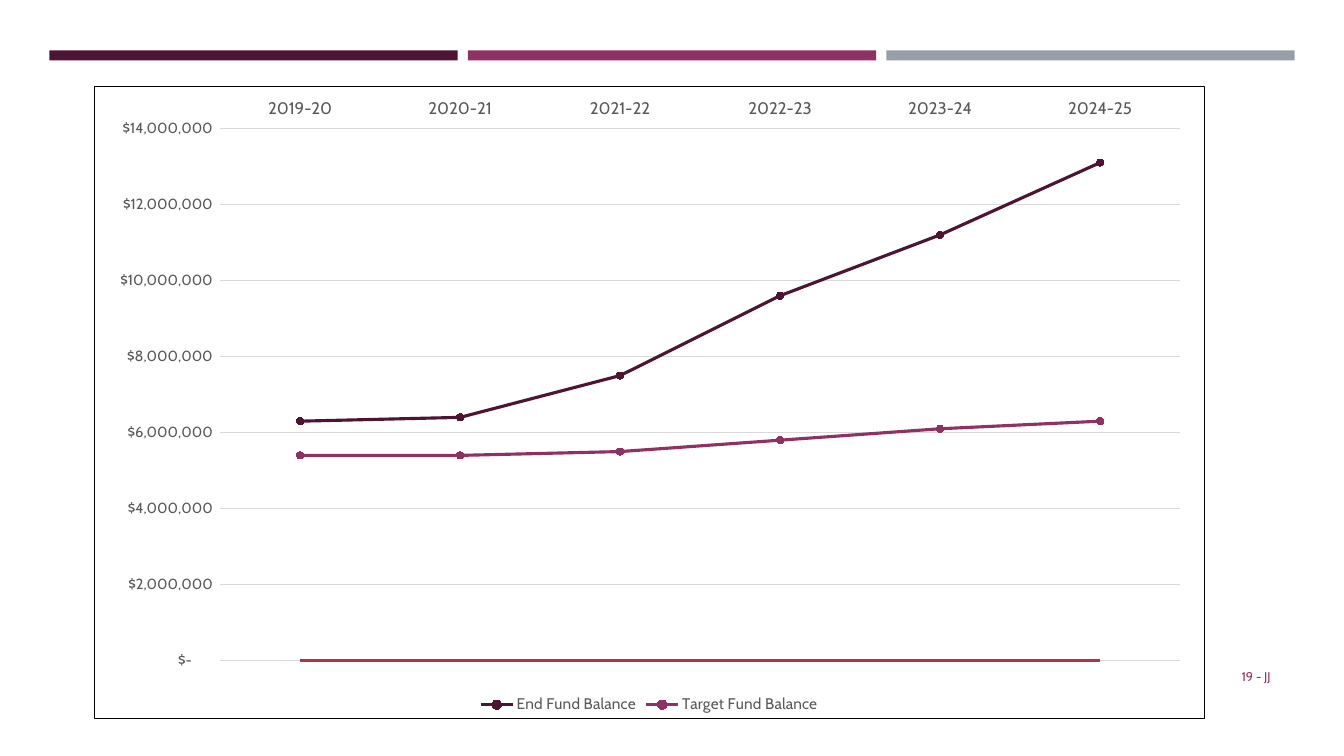
from dataclasses import dataclass

import pptx
import pptx.chart.data
import pptx.dml.color
import pptx.enum.chart
import pptx.enum.shapes
import pptx.enum.text
import pptx.oxml
import pptx.oxml.ns
import pptx.util
from pptx.util import Inches

FONT = "Cabin"
COLORS = {
    "plum": "4D1434",
    "magenta": "903163",
    "gray": "969FA7",
    "red": "B2324B",
    "label": "595959",
    "grid": "D9D9D9",
    "white": "FFFFFF",
    "black": "000000",
}
CURRENCY = '_("$"* #,##0_);_("$"* \\(#,##0\\);_("$"* "-"??_);_(@_)'
YEARS = ["2019-20", "2020-21", "2021-22", "2022-23", "2023-24", "2024-25"]


@dataclass(frozen=True)
class Box:
    left: float
    top: float
    width: float
    height: float

    def emu(self) -> tuple:
        return tuple(Inches(v) for v in (self.left, self.top, self.width, self.height))


@dataclass(frozen=True)
class Balance:
    name: str
    color: str
    millions: tuple
    marked: bool = True


CHART = Box(0.93, 0.85, 11.02, 6.28)
PLOT = Box(2.18, 1.27, 9.53, 5.29)
BALANCES = [
    Balance("End Fund Balance", "plum", (6.3, 6.4, 7.5, 9.6, 11.2, 13.1)),
    Balance("Target Fund Balance", "magenta", (5.4, 5.4, 5.5, 5.8, 6.1, 6.3)),
    Balance("Series 3", "red", (0,) * len(YEARS), marked=False),
]


def rgb(color: str) -> pptx.dml.color.RGBColor:
    return pptx.dml.color.RGBColor.from_string(COLORS[color])


def style_font(font, size: float, color: str) -> None:
    font.name = FONT
    font.size = pptx.util.Pt(size)
    font.color.rgb = rgb(color)


def style_line(line, width: float, color: str) -> None:
    line.width = pptx.util.Pt(width)
    line.color.rgb = rgb(color)


def chart_xml(xml: str):
    head, tail = xml.split(">", 1)
    ns = pptx.oxml.ns.nsdecls("c", "a")
    return pptx.oxml.parse_xml(f"{head} {ns}>{tail}")


def add_bar(slide, box: Box, color: str) -> None:
    s = slide.shapes.add_shape(pptx.enum.shapes.MSO_SHAPE.RECTANGLE, *box.emu())
    s.shadow.inherit = False
    s.fill.solid()
    s.fill.fore_color.rgb = rgb(color)
    s.line.fill.background()


def style_axes(chart) -> None:
    cat, val = chart.category_axis, chart.value_axis
    for axis, size in ((cat, 12), (val, 10.5)):
        axis.major_tick_mark = pptx.enum.chart.XL_TICK_MARK.NONE
        axis.minor_tick_mark = pptx.enum.chart.XL_TICK_MARK.NONE
        style_font(axis.tick_labels.font, size, "label")
    cat.tick_label_position = pptx.enum.chart.XL_TICK_LABEL_POSITION.HIGH
    style_line(cat.format.line, 0.75, "grid")
    val.minimum_scale, val.maximum_scale, val.major_unit = 0, 14_000_000, 2_000_000
    val.format.line.fill.background()
    style_line(val.major_gridlines.format.line, 0.75, "grid")
    val.tick_labels.number_format = CURRENCY
    val.tick_labels.number_format_is_linked = False


def style_series(series, balance: Balance) -> None:
    series.smooth = False
    style_line(series.format.line, 2.25, balance.color)
    if not balance.marked:
        series.marker.style = pptx.enum.chart.XL_MARKER_STYLE.NONE
        return
    series.marker.style = pptx.enum.chart.XL_MARKER_STYLE.CIRCLE
    series.marker.size = 5
    series.marker.format.fill.solid()
    series.marker.format.fill.fore_color.rgb = rgb(balance.color)
    style_line(series.marker.format.line, 0.75, balance.color)


def style_legend(chart) -> None:
    chart.has_legend = True
    legend = chart.legend
    legend.position = pptx.enum.chart.XL_LEGEND_POSITION.BOTTOM
    legend.include_in_layout = False
    style_font(legend.font, 11, "label")
    position = chart.element.find(".//" + pptx.oxml.ns.qn("c:legendPos"))
    for i, balance in reversed(list(enumerate(BALANCES))):
        if not balance.marked:
            position.addnext(chart_xml(
                f'<c:legendEntry><c:idx val="{i}"/><c:delete val="1"/></c:legendEntry>'))


def place_plot(chart) -> None:
    plot_area = chart.element.find(".//" + pptx.oxml.ns.qn("c:plotArea"))
    for layout in plot_area.findall(pptx.oxml.ns.qn("c:layout")):
        plot_area.remove(layout)
    fractions = {
        "x": (PLOT.left - CHART.left) / CHART.width,
        "y": (PLOT.top - CHART.top) / CHART.height,
        "w": PLOT.width / CHART.width,
        "h": PLOT.height / CHART.height,
    }
    sizes = "".join(f'<c:{k} val="{v:.4f}"/>' for k, v in fractions.items())
    plot_area.insert(0, chart_xml(
        '<c:layout><c:manualLayout><c:layoutTarget val="inner"/>'
        f'<c:xMode val="edge"/><c:yMode val="edge"/>{sizes}</c:manualLayout></c:layout>'))


def frame_chart(chart) -> None:
    chart.element.find(pptx.oxml.ns.qn("c:chart")).addnext(chart_xml(
        f'<c:spPr><a:solidFill><a:srgbClr val="{COLORS["white"]}"/></a:solidFill>'
        f'<a:ln w="{pptx.util.Pt(0.75)}"><a:solidFill>'
        f'<a:srgbClr val="{COLORS["black"]}"/></a:solidFill></a:ln></c:spPr>'))


def add_balance_chart(slide) -> None:
    data = pptx.chart.data.CategoryChartData(number_format=CURRENCY)
    data.categories = YEARS
    for balance in BALANCES:
        data.add_series(balance.name, [round(v * 1_000_000) for v in balance.millions])
    kind = pptx.enum.chart.XL_CHART_TYPE.LINE_MARKERS
    chart = slide.shapes.add_chart(kind, *CHART.emu(), data).chart
    chart.has_title = False
    style_font(chart.font, 10, "black")
    chart.plots[0].vary_by_categories = False
    style_axes(chart)
    for series, balance in zip(chart.plots[0].series, BALANCES):
        style_series(series, balance)
    style_legend(chart)
    place_plot(chart)
    frame_chart(chart)


def add_page_label(slide, text: str, box: Box) -> None:
    tf = slide.shapes.add_textbox(*box.emu()).text_frame
    tf.word_wrap = True
    tf.vertical_anchor = pptx.enum.text.MSO_ANCHOR.MIDDLE
    p = tf.paragraphs[0]
    p.text = text
    p.alignment = pptx.enum.text.PP_ALIGN.RIGHT
    style_font(p.runs[0].font, 9, "magenta")


def main() -> None:
    prs = pptx.Presentation()
    prs.slide_width, prs.slide_height = Inches(13.33), Inches(7.5)
    slide = prs.slides.add_slide(prs.slide_layouts[6])

    # Header bars
    for i, color in enumerate(("plum", "magenta", "gray")):
        add_bar(slide, Box(0.49 + 4.15 * i, 0.5, 4.05, 0.1), color)

    # Fund balance chart and page label
    add_balance_chart(slide)
    add_page_label(slide, "19 - JJ", Box(11.55, 6.51, 1.15, 0.4))

    prs.save("out.pptx")


if __name__ == "__main__":
    main()
